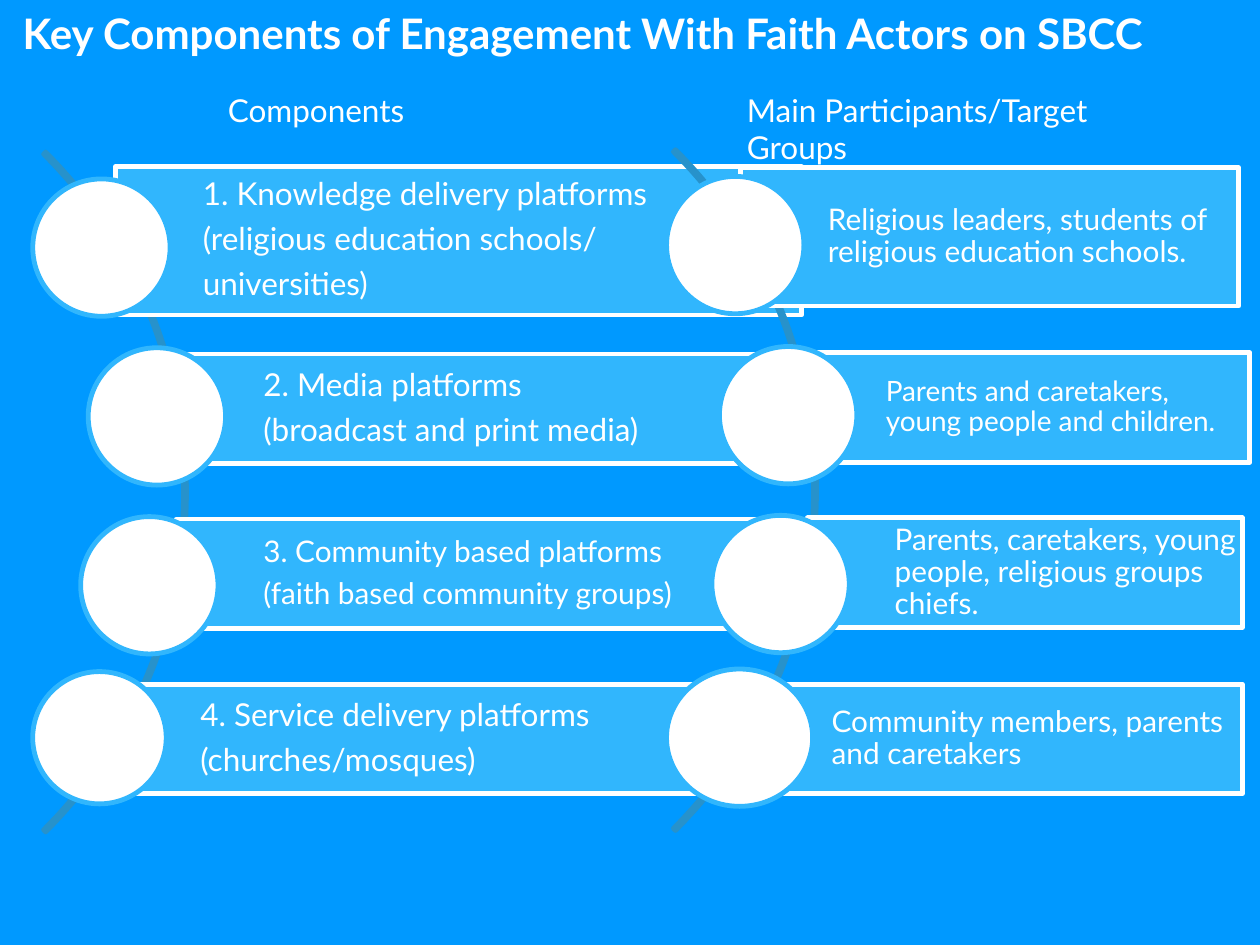
import pptx
import pptx.dml.color
import pptx.enum.shapes
import pptx.enum.text
import pptx.util

Inches = pptx.util.Inches
Pt = pptx.util.Pt
Shapes = pptx.enum.shapes.MSO_SHAPE
Anchor = pptx.enum.text.MSO_ANCHOR
Align = pptx.enum.text.PP_ALIGN

BLUE, LIGHT_BLUE, ARC_BLUE, WHITE = "0099FF", "31B6FD", "2792CB", "FFFFFF"


def colour(value):
    return pptx.dml.color.RGBColor.from_string(value)


def assign(target, values):
    for name, value in values.items():
        setattr(target, name, value)


class Painter:
    """Holds the style and the current slide."""

    font = "Lato"
    line_width = 2.75

    def __init__(self, deck):
        self.page = deck.slides.add_slide(deck.slide_layouts[5])
        fill = self.page.background.fill
        fill.solid()
        fill.fore_color.rgb = colour(BLUE)

    def fill_text(self, box, lines, size, bold=False, frame=None, paragraph=None):
        text = box.text_frame
        assign(text, {"word_wrap": True, "vertical_anchor": Anchor.TOP,
                      "auto_size": pptx.enum.text.MSO_AUTO_SIZE.NONE, **(frame or {})})
        for index, line in enumerate(lines):
            para = text.add_paragraph() if index else text.paragraphs[0]
            assign(para, {"alignment": Align.LEFT, **(paragraph or {})})
            span = para.add_run()
            span.text = line
            assign(span.font, {"name": self.font, "size": Pt(size), "bold": bold})
            span.font.color.rgb = colour(WHITE)

    def title(self, text, left, top, width, height):
        box = self.page.shapes.title
        assign(box, {"left": Inches(left), "top": Inches(top),
                     "width": Inches(width), "height": Inches(height)})
        self.fill_text(box, [text], 24, bold=True)

    def heading(self, text, left, top, width, height):
        box = self.page.shapes.add_textbox(
            Inches(left), Inches(top), Inches(width), Inches(height))
        self.fill_text(box, [text], 18)

    def shape(self, kind, left, top, width, height, fill, line):
        shape = self.page.shapes.add_shape(
            kind, Inches(left), Inches(top), Inches(width), Inches(height))
        shape.shadow.inherit = False
        if fill:
            shape.fill.solid()
            shape.fill.fore_color.rgb = colour(fill)
        else:
            shape.fill.background()
        shape.line.color.rgb = colour(line)
        shape.line.width = Pt(self.line_width)
        return shape

    def arc(self, left, top, size):
        arc = self.shape(Shapes.BLOCK_ARC, left, top, size, size, None, ARC_BLUE)
        for index, value in enumerate((189, 27, 0.003)):
            arc.adjustments[index] = value

    def bar(self, place, lines, size):
        bar = self.shape(Shapes.RECTANGLE, *place, LIGHT_BLUE, WHITE)
        inset = Inches(0.05)
        self.fill_text(
            bar, lines, size,
            frame={"vertical_anchor": Anchor.MIDDLE, "margin_left": Inches(0.69),
                   "margin_right": inset, "margin_top": inset, "margin_bottom": inset},
            paragraph={"line_spacing": 0.9, "space_after": Pt(0.35 * size)})

    def circle(self, place):
        self.shape(Shapes.OVAL, *place, WHITE, LIGHT_BLUE)


# Each column: arc place, then rows of bar place, circle place, size and lines
COMPONENTS = ((-6.15, 0.09, 7.63), [
    ((0.92, 1.32, 5.44, 1.18), (0.26, 1.42, 1.09, 1.09), 18,
     ["1. Knowledge delivery platforms", "(religious education schools/", "universities)"]),
    ((1.4, 2.81, 4.94, 0.87), (0.7, 2.76, 1.09, 1.09), 18,
     ["2. Media platforms", "(broadcast and print media)"]),
    ((1.4, 4.12, 4.94, 0.87), (0.64, 4.1, 1.09, 1.09), 17,
     ["3. Community based platforms", "(faith based community groups)"]),
    ((0.9, 5.43, 5.44, 0.87), (0.26, 5.33, 1.06, 1.05), 18,
     ["4. Service delivery platforms", "(churches/mosques)"]),
])
PARTICIPANTS = ((-1.16, 0.07, 7.64), [
    ((5.88, 1.33, 3.95, 1.1), (5.29, 1.4, 1.09, 1.09), 17,
     ["Religious leaders, students of religious education schools."]),
    ((6.34, 2.8, 3.58, 0.87), (5.71, 2.75, 1.09, 1.09), 16,
     ["Parents and caretakers, young people and children."]),
    ((6.41, 4.11, 3.45, 0.87), (5.65, 4.09, 1.09, 1.09), 17,
     ["Parents, caretakers, young people, religious groups chiefs."]),
    ((5.91, 5.43, 3.95, 0.87), (5.29, 5.31, 1.16, 1.09), 17,
     ["Community members, parents and caretakers"]),
])


def main():
    deck = pptx.Presentation()
    assign(deck, {"slide_width": Inches(10), "slide_height": Inches(7.5)})
    painter = Painter(deck)

    # Title
    painter.title("Key Components of Engagement With Faith Actors on SBCC",
                  0.08, 0.01, 9.16, 0.5)

    # Curved lists
    for arc, rows in (COMPONENTS, PARTICIPANTS):
        painter.arc(*arc)
        for bar, circle, size, lines in rows:
            painter.bar(bar, lines, size)
            painter.circle(circle)

    # Column headings
    painter.heading("Components", 1.71, 0.67, 1.75, 0.4)
    painter.heading("Main Participants/Target Groups", 5.83, 0.67, 3.76, 0.4)

    deck.save("out.pptx")


if __name__ == "__main__":
    main()
